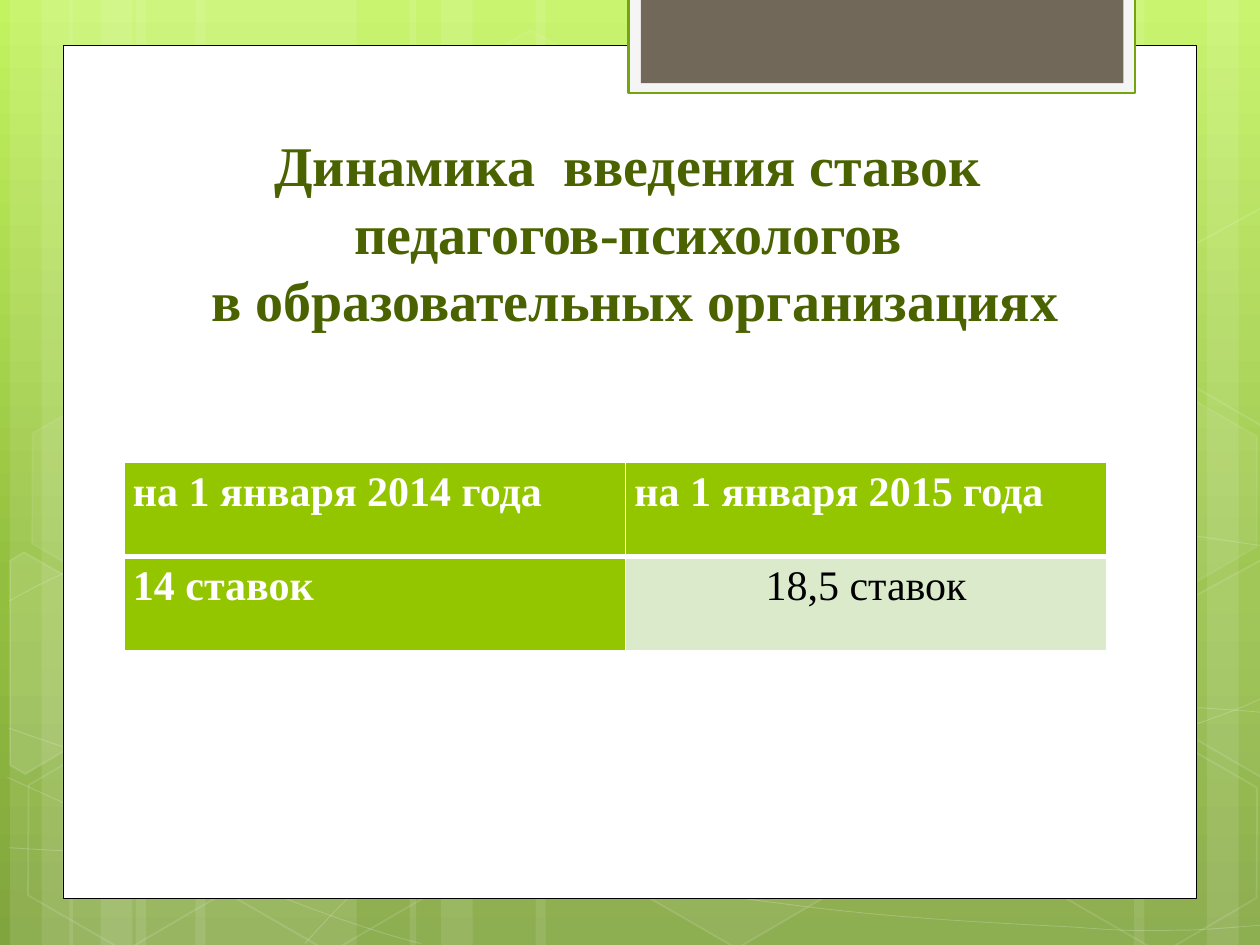
from itertools import product
from math import cos, radians, sin

from copy import deepcopy
from lxml.etree import SubElement as Sub
from pptx import Presentation
from pptx.dml.color import RGBColor as RGB
from pptx.enum.shapes import MSO_SHAPE as Shape
from pptx.enum.text import MSO_ANCHOR as Anchor, PP_ALIGN as Align
from pptx.oxml.ns import qn
from pptx.util import Cm, Pt

COLORS = {
    "white": "FFFFFF", "black": "000000", "title": "4A6300", "header": "94C600",
    "value": "DCEACC", "frame": "F5F5F5", "frame_line": "74A510", "tab": "71685A",
}
BACKGROUND = [(0, "C3F35F"), (0.62, "93BF3F"), (1, "81A53E")]
FONT = "Times New Roman"
TITLE = ["Динамика  введения ставок ", "педагогов-психологов ", "в образовательных организациях"]
TABLE = [["на 1 января 2014 года", "на 1 января 2015 года"], ["14 ставок", "18,5 ставок"]]
TITLE_FORMAT = {"name": FONT, "size": Pt(32), "bold": True}
CELL_FORMAT = {"name": FONT, "size": Pt(24), "bold": True}
VALUE_FORMAT = {**CELL_FORMAT, "bold": False}
CELL_INSETS = {"margin_left": Cm(0.18), "margin_right": Cm(0.18), "margin_top": 0, "margin_bottom": 0}

WIDTH, HEIGHT = 25.4, 19.05
COLUMNS, ROW_HEIGHT = [10.11, 9.7], 1.9
TILT = 30
BANDS = [
    (2.74, 4.45), (0.2, 1.27), (0.84, 2.11), (3.94, 4.45), (1.4, 1.27), (2.03, 2.11),
    (18.62, 4.45), (24.33, 1.27), (22.86, 2.11), (10.8, 7.82), (8.26, 1.27), (8.89, 2.11),
]
CURVES = [
    [(0.18, 17.09), (1.55, 17.17), (2.92, 17.25), (4.83, 17.22), (6.73, 17.2), (9.09, 17.15),
     (11.63, 16.89), (14.17, 16.64), (17.78, 16.15), (20.12, 15.67), (22.43, 15.19),
     (24.82, 14.43), (25.58, 14)],
    [(0.18, 12.12), (0.91, 11.71), (1.65, 11.33), (3.07, 10.95), (4.52, 10.57), (6.58, 10.01),
     (8.81, 9.83), (11.07, 9.65), (13.82, 9.63), (16.61, 9.83), (19.41, 10.03),
     (24.05, 10.82), (25.58, 11.02)],
    [(0.15, 15.67), (3.23, 17.07), (6.27, 18.47), (8.48, 19.02)],
    [(0.18, 14.68), (0.97, 14.96), (1.78, 15.24), (3.25, 15.65), (4.72, 16.03), (6.93, 16.66),
     (9.07, 17.09), (11.18, 17.53), (13.84, 17.98), (15.95, 18.24), (18.06, 18.52),
     (20.32, 18.62), (21.67, 18.69), (22.99, 18.8), (23.34, 18.75), (24, 18.75),
     (24.66, 18.72), (25.12, 18.67), (25.58, 18.64)],
    [(6.15, 19.02), (6.6, 18.52), (7.06, 18.01), (7.67, 17.55), (8.28, 17.09), (9.14, 16.59),
     (9.86, 16.23), (10.57, 15.88), (11, 15.72), (11.94, 15.47), (12.85, 15.21),
     (14.55, 14.86), (15.44, 14.68), (16.36, 14.5), (16.48, 14.5), (17.27, 14.45),
     (18.06, 14.38), (19.3, 14.3), (20.17, 14.27), (21.06, 14.25), (22.5, 14.27),
     (22.5, 14.27), (22.5, 14.27), (24.21, 14.27), (24.21, 14.27), (24.66, 14.3),
     (25.1, 14.33), (25.32, 14.35), (25.55, 14.38), (25.48, 14.35), (25.55, 14.38)],
]
HEXAGONS = [
    (8.48, 0.91, 4, 8), (12.62, 14.96, 6, 12), (0.28, 15.01, 0, 12), (0.36, 7.92, 7, 8),
    (4.42, 15.04, 0, 12), (19.13, 11.51, 10, 12), (21.18, 15.06, 0, 12), (21.18, 7.98, 7, 8),
]
LEFT_CUT = [(0.2, 11.3), (0.48, 11.13), (2.44, 12.24), (2.41, 14.48), (0.51, 15.6), (0.2, 15.42)]
RIGHT_CUT = [(23.52, 12.32), (25.43, 11.28), (25.63, 11.33), (25.63, 15.57), (25.45, 15.67), (23.52, 14.55)]
CUT_HEXAGONS = [
    (LEFT_CUT, (0.91, 13.59), 10),
    (RIGHT_CUT, (25.02, 13.21), 4),
    ([(x, y - 7.09) for x, y in RIGHT_CUT], (25.02, 6.12), 0),
]
PANELS = [
    ((1.27, 0.91, 22.86, 17.2), "white", "black", 0.5),
    ((12.67, -0.05, 10.21, 1.93), "frame", "frame_line", 1.25),
    ((12.92, -0.05, 9.73, 1.73), "tab", None, 0),
]


def color(name):
    return RGB.from_string(COLORS[name])


def solid(fill, name):
    fill.solid()
    fill.fore_color.rgb = color(name)


def fade(sp, where, alpha):
    clr = sp._element.spPr.find(f"{where}/{qn('a:srgbClr')}")
    Sub(clr, qn("a:alpha"), val=str(alpha * 1000))


def paint(sp, fill=None, line=None, width=0, fill_alpha=100, line_alpha=100):
    sp.shadow.inherit = False
    if fill and fill_alpha:
        solid(sp.fill, fill)
        fade(sp, qn("a:solidFill"), fill_alpha)
    else:
        sp.fill.background()
    if line:
        solid(sp.line.fill, line)
        sp.line.width = Pt(width)
        fade(sp, f"{qn('a:ln')}/{qn('a:solidFill')}", line_alpha)
    else:
        sp.line.fill.background()


def add_preset(s, kind, box):
    return s.shapes.add_shape(kind, *map(Cm, box))


def add_outline(s, points, close):
    start, *rest = [(Cm(x), Cm(y)) for x, y in points]
    fb = s.shapes.build_freeform(*start)
    fb.add_line_segments(rest, close=close)
    return fb.convert_to_shape()


def add_curve(s, points):
    sp = add_outline(s, points, False)
    segments = list(sp._element.iter(qn("a:lnTo")))
    for i in range(0, len(segments), 3):
        curve = Sub(segments[i].getparent(), qn("a:cubicBezTo"))
        for segment in segments[i:i + 3]:
            curve.append(segment[0])
            segment.getparent().remove(segment)
    return sp


def turn_back(points, center):
    cx, cy = center
    c, n = cos(radians(TILT)), sin(radians(TILT))
    return [(cx + (x - cx) * c + (y - cy) * n, cy - (x - cx) * n + (y - cy) * c) for x, y in points]


def add_run(p, text, fmt, name):
    r = p.add_run()
    r.text = text
    for key, value in fmt.items():
        setattr(r.font, key, value)
    r.font.color.rgb = color(name)


def add_background(s):
    fill = s.background.fill
    fill.gradient()
    fill.gradient_angle = 270
    stops = next(s._element.iter(qn("a:gsLst")))
    stops.append(deepcopy(stops[-1]))
    for stop, (position, value) in zip(fill.gradient_stops, BACKGROUND):
        stop.position = position
        stop.color.rgb = RGB.from_string(value)


def add_decor(s):
    for x, w in BANDS:
        paint(add_preset(s, Shape.RECTANGLE, (x, 0, w, HEIGHT)), "white", fill_alpha=10)
    for points in CURVES:
        paint(add_curve(s, points), None, "white", 0.5, line_alpha=20)
    for x, y, fill_alpha, line_alpha in HEXAGONS:
        sp = add_preset(s, Shape.HEXAGON, (x, y, 4.45, 3.86))
        sp.rotation = TILT
        sp.adjustments[0] = 0.285
        paint(sp, "white", "white", 1, fill_alpha, line_alpha)
    for points, center, alpha in CUT_HEXAGONS:
        sp = add_outline(s, turn_back(points, center), True)
        sp.rotation = TILT
        paint(sp, "white", "white", 1, alpha, 12)
    for box, fill, line, width in PANELS:
        paint(add_preset(s, Shape.RECTANGLE, box), fill, line, width)


def add_title(s):
    tf = s.shapes.add_textbox(*map(Cm, (1.5, 2.92, 22.61, 3.91))).text_frame
    tf.word_wrap = True
    tf.vertical_anchor = Anchor.BOTTOM
    p = tf.paragraphs[0]
    p.alignment = Align.CENTER
    for i, line in enumerate(TITLE):
        if i:
            p.add_line_break()
        add_run(p, line, TITLE_FORMAT, "title")


def add_border(cell, side, width):
    ln = Sub(cell._tc.get_or_add_tcPr(), qn(f"a:ln{side}"), w=str(Pt(width)))
    Sub(Sub(ln, qn("a:solidFill")), qn("a:srgbClr"), val=COLORS["white"])


def add_rates_table(s):
    box = (2.5, 9.32, sum(COLUMNS), ROW_HEIGHT * len(TABLE))
    table = s.shapes.add_table(len(TABLE), len(COLUMNS), *map(Cm, box)).table
    for column, width in zip(table.columns, COLUMNS):
        column.width = Cm(width)
    for i, j in product(range(len(TABLE)), range(len(COLUMNS))):
        cell = table.cell(i, j)
        is_value = i > 0 and j > 0
        for key, value in CELL_INSETS.items():
            setattr(cell, key, value)
        for side, width in {"L": 1, "R": 1, "T": 3 if i else 1, "B": 1 if i else 3}.items():
            add_border(cell, side, width)
        solid(cell.fill, "value" if is_value else "header")
        p = cell.text_frame.paragraphs[0]
        p.line_spacing = 1.15
        p.alignment = Align.CENTER if is_value else Align.LEFT
        add_run(p, TABLE[i][j], VALUE_FORMAT if is_value else CELL_FORMAT, "black" if is_value else "white")


prs = Presentation()
prs.slide_width, prs.slide_height = Cm(WIDTH), Cm(HEIGHT)
s = prs.slides.add_slide(prs.slide_layouts[6])
for build in (add_background, add_decor, add_title, add_rates_table):
    build(s)
prs.save("out.pptx")
